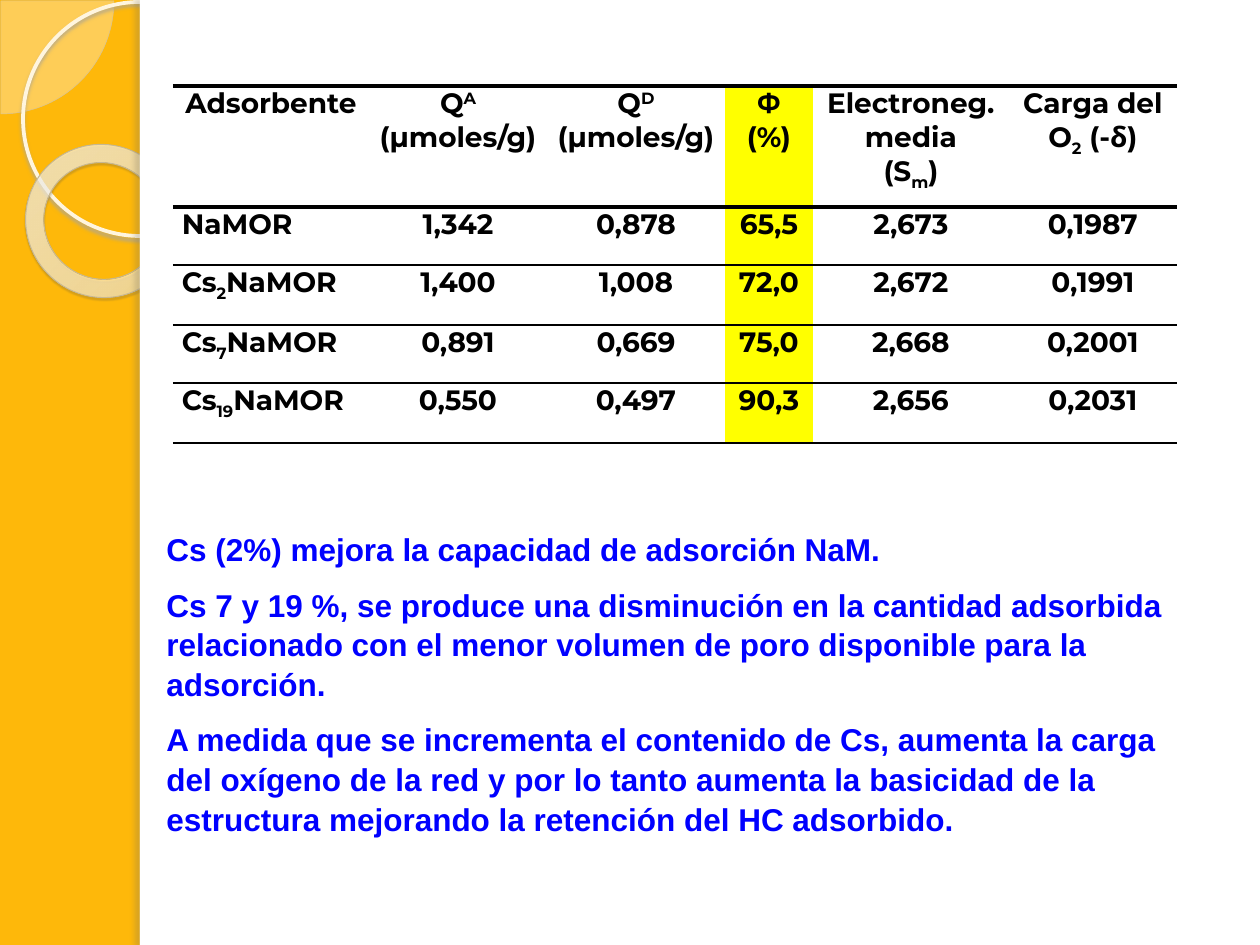
import dataclasses

import pptx
import pptx.dml.color
import pptx.enum.shapes
import pptx.enum.text
import pptx.oxml
import pptx.oxml.ns
import pptx.util

KIND = pptx.enum.shapes.MSO_SHAPE
ALIGN = pptx.enum.text.PP_ALIGN
NS = pptx.oxml.ns.nsdecls("a")


@dataclasses.dataclass(frozen=True)
class Theme:
    amber: str = "FEB80A"
    white: str = "FFFFFF"
    ink: str = "000000"
    mark: str = "FFFF00"
    blue: str = "0000FF"
    cream: str = "FEFAF4"
    tan: str = "D3C39F"
    ivory: str = "FFF5DE"
    sand: str = "C7B893"
    # Stops of the donut: place, colour, opacity in %
    glow: tuple = ((0, "FFFCF6", 70), (70, "FFFEFB", 55), (100, "F0D28E", 60))
    # Shadows: colour, opacity in %, blur and distance in pt, angle
    ring_shade: tuple = ("B0A68F", 85, 2, 2, 90)
    donut_shade: tuple = ("5A5444", 35, 1, 1.2, 75)
    edge_shade: tuple = ("736F63", 25, 3, 3, 180)
    grid_font: str = "Montserrat"
    note_font: str = "Arial"
    grid_size: int = 16
    note_size: int = 18
    thick: float = 2.25
    thin: float = 1


THEME = Theme()

# A part after "|" that starts with ^ is raised, with _ lowered
HEADS = ["Adsorbente", "Q|^A| (μmoles/g)", "Q|^D\n(μmoles/g)", "Φ (%)",
         "Electroneg.media\n(S|_m|)", "Carga del O|_2| (-δ)"]
ROWS = [
    ["NaMOR", "1,342", "0,878", "65,5", "2,673", "0,1987"],
    ["Cs|_2|NaMOR", "1,400", "1,008", "72,0", "2,672", "0,1991"],
    ["Cs|_7|NaMOR", "0,891", "0,669", "75,0", "2,668", "0,2001"],
    ["Cs|_19|NaMOR", "0,550", "0,497", "90,3", "2,656", "0,2031"],
]
WIDTHS = [196, 178, 178, 88, 196, 168]
HEIGHTS = [121, 58, 60, 58, 60]
MARK_COL = 3
SHIFTS = {"^": "30000", "_": "-25000"}
NOTES = [
    "Cs (2%) mejora la capacidad de adsorción NaM.",
    "Cs 7 y 19 %, se produce una disminución en la cantidad adsorbida "
    "relacionado con el menor volumen de poro disponible para la adsorción.",
    "A medida que se incrementa el contenido de Cs, aumenta la carga del "
    "oxígeno de la red y por lo tanto aumenta la basicidad de la estructura "
    "mejorando la retención del HC adsorbido.",
]


def px(n):
    return round(n * 914400 / 126)


def rgb(code):
    return pptx.dml.color.RGBColor.from_string(code)


def tint(code, alpha):
    return f'<a:srgbClr val="{code}"><a:alpha val="{alpha * 1000}"/></a:srgbClr>'


def style(run, font, size, code):
    run.font.name, run.font.size = font, pptx.util.Pt(size)
    run.font.bold = True
    run.font.color.rgb = rgb(code)


def shape(slide, kind, box, fill=None, line=None, shade=None):
    item = slide.shapes.add_shape(kind, *map(px, box))
    if fill:
        item.fill.solid()
        item.fill.fore_color.rgb = rgb(fill)
    else:
        item.fill.background()
    if line:
        item.line.color.rgb = rgb(line[0])
        item.line.width = pptx.util.Pt(line[1])
    else:
        item.line.fill.background()
    item.shadow.inherit = False
    if shade:
        code, alpha, blur, gap, turn = shade
        item._element.spPr.find(pptx.oxml.ns.qn("a:effectLst")).append(
            pptx.oxml.parse_xml(
                f'<a:outerShdw {NS} blurRad="{pptx.util.Pt(blur)}" '
                f'dist="{pptx.util.Pt(gap)}" dir="{turn * 60000}" '
                f'algn="tl" rotWithShape="0">{tint(code, alpha)}</a:outerShdw>'))
    return item


def side(slide, box):
    x, y, w, h = box
    # Corner quarter disc
    pie = shape(slide, KIND.PIE, (x - 112, y - 112, 226, 226),
                THEME.cream, (THEME.tan, 0.25))
    pie.adjustments[0], pie.adjustments[1] = 0, 54.02
    code = pie._element.spPr.find(pptx.oxml.ns.qn("a:solidFill"))[0]
    code.append(pptx.oxml.parse_xml(f'<a:alpha {NS} val="33000"/>'))
    # Large ring
    shape(slide, KIND.OVAL, (x + 23, y + 2, 234, 234),
          line=(THEME.ivory, 2.15), shade=THEME.ring_shade)
    # Tilted donut with a radial glow
    donut = shape(slide, KIND.DONUT, (x + 25, y + 145, 155, 152),
                  line=(THEME.sand, 0.58), shade=THEME.donut_shade)
    donut.rotation = 38.6
    donut.adjustments[0] = 0.12
    stops = "".join(f'<a:gs pos="{at * 1000}">{tint(code, alpha)}</a:gs>'
                    for at, code, alpha in THEME.glow)
    props = donut._element.spPr
    props.replace(props.find(pptx.oxml.ns.qn("a:noFill")), pptx.oxml.parse_xml(
        f'<a:gradFill {NS} rotWithShape="1"><a:gsLst>{stops}</a:gsLst>'
        '<a:path path="circle"><a:fillToRect l="-408000" t="-50000" '
        'r="508000" b="150000"/></a:path></a:gradFill>'))
    # White page and its shaded edge
    shape(slide, KIND.RECTANGLE, (x + 140, y, w - 140, h), THEME.white)
    shape(slide, KIND.RECTANGLE, (x + 140, y, 10, h), THEME.white,
          shade=THEME.edge_shade)


def rules(cell, top, base):
    widths = {"lnL": 0, "lnR": 0, "lnT": top, "lnB": base}
    props = cell._tc.get_or_add_tcPr()
    for i, (tag, width) in enumerate(widths.items()):
        paint = (f'<a:solidFill><a:srgbClr val="{THEME.ink}"/></a:solidFill>'
                 if width else "<a:noFill/>")
        props.insert(i, pptx.oxml.parse_xml(
            f'<a:{tag} {NS} w="{pptx.util.Pt(width)}">{paint}</a:{tag}>'))


def fill_cell(cell, text, align):
    cell.margin_left = cell.margin_right = px(9)
    cell.margin_top = cell.margin_bottom = 0
    cell.text_frame.text = "\n" * text.count("\n")
    for para, line in zip(cell.text_frame.paragraphs, text.split("\n")):
        para.alignment = align
        for part in line.split("|"):
            run = para.add_run()
            run.text = part.lstrip("^_")
            style(run, THEME.grid_font, THEME.grid_size, THEME.ink)
            if part[0] in SHIFTS:
                run._r.get_or_add_rPr().set("baseline", SHIFTS[part[0]])


def grid(slide, box):
    data = [HEADS] + ROWS
    table = slide.shapes.add_table(len(data), len(HEADS), *map(px, box)).table
    table.first_row = table.horz_banding = False
    for col, width in zip(table.columns, WIDTHS):
        col.width = px(width)
    for r, (row, high) in enumerate(zip(data, HEIGHTS)):
        table.rows[r].height = px(high)
        for c, text in enumerate(row):
            cell = table.cell(r, c)
            fill_cell(cell, text, ALIGN.JUSTIFY if r and not c else ALIGN.CENTER)
            if c == MARK_COL:
                cell.fill.solid()
                cell.fill.fore_color.rgb = rgb(THEME.mark)
            else:
                cell.fill.background()
            rules(cell, THEME.thick if r < 2 else THEME.thin,
                  THEME.thin if r else THEME.thick)


def notes(slide, box):
    frame = slide.shapes.add_textbox(*map(px, box)).text_frame
    frame.word_wrap = True
    frame.auto_size = pptx.enum.text.MSO_AUTO_SIZE.SHAPE_TO_FIT_TEXT
    frame.text = "\n".join(NOTES)
    for para in frame.paragraphs:
        para.space_before = pptx.util.Pt(THEME.note_size / 2)
        para.line_spacing = 1.05
        style(para.runs[0], THEME.note_font, THEME.note_size, THEME.blue)


def main():
    deck = pptx.Presentation()
    deck.slide_width, deck.slide_height = px(1260), px(945)
    slide = deck.slides.add_slide(deck.slide_layouts[6])
    slide.background.fill.solid()
    slide.background.fill.fore_color.rgb = rgb(THEME.amber)
    side(slide, (0, 0, 1260, 945))
    grid(slide, (173, 86, sum(WIDTHS), sum(HEIGHTS)))
    notes(slide, (154, 522, 1062, 316))
    deck.save("out.pptx")


if __name__ == "__main__":
    main()
